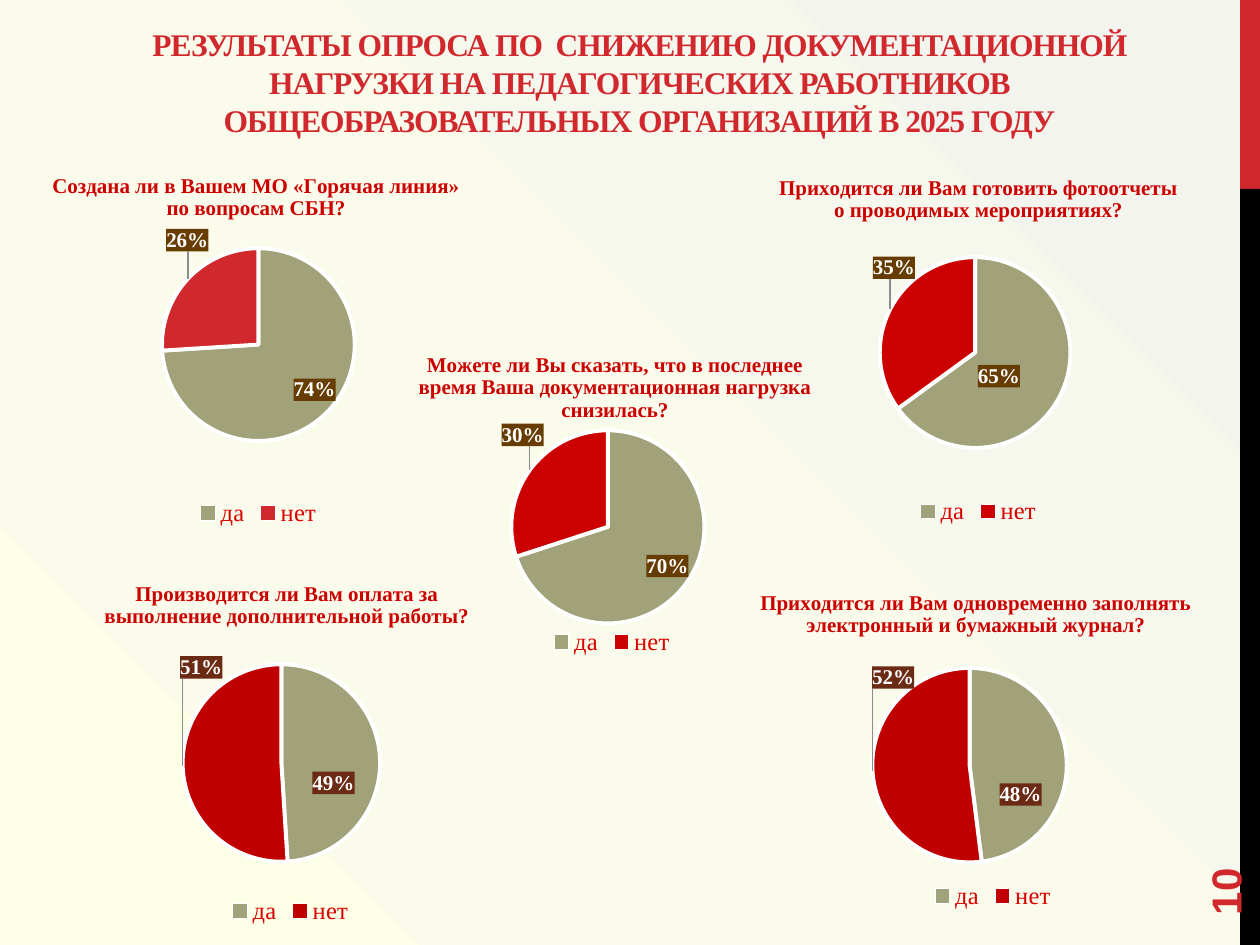
import math
from pptx import Presentation
from pptx import util as u
from pptx.chart.data import CategoryChartData
from pptx.dml.color import RGBColor
from pptx.enum import chart as ch, shapes, text
from pptx.oxml import parse_xml
from pptx.oxml.ns import qn

INK = dict(red="D1282E", black="000000", head="CC0000", key="DA0000", yes="A1A17A",
           deep="C00000", white="FFFFFF", brown="663C00", rust="6B2A14", gray="8C8C8C")
SERIF, SANS = "Times New Roman", "Arial"
NS = ('xmlns:c="http://schemas.openxmlformats.org/drawingml/2006/chart" '
      'xmlns:a="http://schemas.openxmlformats.org/drawingml/2006/main" '
      'xmlns:p="http://schemas.openxmlformats.org/presentationml/2006/main"')
TITLE = ("РЕЗУЛЬТАТЫ ОПРОСА ПО  СНИЖЕНИЮ ДОКУМЕНТАЦИОННОЙ НАГРУЗКИ НА ПЕДАГОГИЧЕСКИХ "
         "РАБОТНИКОВ ОБЩЕОБРАЗОВАТЕЛЬНЫХ ОРГАНИЗАЦИЙ В 2025 ГОДУ")
BARS = [(0, 3.81, "red"), (3.81, 15.24, "black")]
STOPS = [(0, "FDFFE7"), (38, "FAFBEA"), (99, "F4F4EF")]
TAG = 0.54, 0.31
PIES = [
    dict(box=(-1.14, 3.1, 12.7, 7.62), plot=(0.09, 0.25, 0.82, 0.51), head=(0.98, 3.4),
         ask=["Создана ли в Вашем МО «Горячая линия»", "по вопросам СБН?"],
         vals=(0.74, 0.26), no="red", tag="brown", tags=[(6.35, 7.84), (3.77, 4.86)]),
    dict(box=(13.56, 3.15, 12.32, 7.54), plot=(0.09, 0.27, 0.81, 0.51), head=(15.63, 3.44),
         ask=["Приходится ли Вам готовить фотоотчеты", "о проводимых мероприятиях?"],
         vals=(0.65, 0.35), no="head", tag="brown", tags=[(20.12, 7.6), (18.04, 5.38)]),
    dict(box=(13.97, 11.58, 11.99, 7.26), plot=(0.02, 0.26, 0.89, 0.54), head=(15.25, 11.8),
         ask=["Приходится ли Вам одновременно заполнять", "электронный и бумажный журнал?"],
         vals=(0.48, 0.52), no="deep", tag="rust", tags=[(20.54, 16.03), (18.04, 13.65)],
         key=(18.69, 17.68)),
    dict(box=(-0.23, 11.51, 12.17, 7.24), plot=(0.01, 0.26, 0.95, 0.55), head=(2.03, 11.62),
         ask=["Производится ли Вам оплата за", "выполнение дополнительной работы?"],
         vals=(0.49, 0.51), no="deep", tag="rust", tags=[(6.69, 15.79), (4.09, 13.45)]),
    dict(box=(7.24, 6.73, 10.34, 7.21), plot=(0.04, 0.27, 0.89, 0.54), head=(8.36, 7.01),
         ask=["Можете ли Вы сказать, что в последнее", "время Ваша документационная нагрузка",
              "снизилась?"],
         vals=(0.7, 0.3), no="head", tag="brown", tags=[(13.45, 11.41), (10.54, 8.77)],
         key=(11.01, 12.56)),
]


def rgb(name):
    return RGBColor.from_string(INK[name])


def style(font, size, color, face=SERIF, bold=True):
    font.size, font.bold, font.name = u.Pt(size), bold, face
    font.color.rgb = rgb(color)


def write(slide, box, words, size, face, anchor, align):
    item = slide.shapes.add_textbox(*map(u.Cm, box))
    frame = item.text_frame
    frame.text, frame.word_wrap, frame.vertical_anchor = words, True, anchor
    para = frame.paragraphs[0]
    para.alignment = align
    style(para.runs[0].font, size, "red", face)
    return item


def layout(*nums, edge=True):
    inner = '<c:layoutTarget val="inner"/>' if len(nums) == 4 else ""
    modes = '<c:xMode val="edge"/><c:yMode val="edge"/>' if edge else ""
    vals = "".join(f'<c:{k} val="{v:.4f}"/>' for k, v in zip("xywh", nums))
    return (f'<c:layout {NS}><c:manualLayout>{inner}{modes}{vals}'
            '</c:manualLayout></c:layout>')


def place(node, xml, after=None):
    for old in node.findall(qn("c:layout")):
        node.remove(old)
    spot = node.find(qn(after)) if after else None
    node.insert(0 if spot is None else node.index(spot) + 1, parse_xml(xml))


def pin(node, pie, spot, after):
    left, top, wide, high = pie["box"]
    place(node, layout((spot[0] - left) / wide, (spot[1] - top) / high), after)


def home(mid, rad, turn):
    side, rise = math.sin(turn), -math.cos(turn)
    lift = math.copysign(TAG[1], rise) if abs(rise) > 0.38 else 0
    return mid[0] + rad * side + math.copysign(TAG[0], side), mid[1] + rad * rise + lift


def labels(pie):
    left, top, wide, high = pie["box"]
    x, y, w, h = pie["plot"]
    mid = left + (x + w / 2) * wide, top + (y + h / 2) * high
    rad = min(w * wide, h * high) / 2
    look = (f'<c:numFmt formatCode="0%" sourceLinked="0"/><c:spPr><a:solidFill>'
            f'<a:srgbClr val="{INK[pie["tag"]]}"/></a:solidFill></c:spPr><c:txPr><a:bodyPr/>'
            f'<a:p><a:pPr><a:defRPr sz="1200" b="1"><a:solidFill><a:srgbClr val="{INK["white"]}"/>'
            f'</a:solidFill><a:latin typeface="{SERIF}"/></a:defRPr></a:pPr></a:p></c:txPr>'
            '<c:dLblPos val="bestFit"/>')
    look += "".join(f'<c:show{k} val="{int(k == "Val")}"/>' for k in
                    ("LegendKey", "Val", "CatName", "SerName", "Percent", "BubbleSize"))
    turns = math.pi * pie["vals"][0], math.pi * (1 + pie["vals"][0])
    rows = ""
    for i, (turn, spot) in enumerate(zip(turns, pie["tags"])):
        base = home(mid, rad, turn)
        move = layout((spot[0] - base[0]) / wide, (spot[1] - base[1]) / high, edge=False)
        rows += f'<c:dLbl><c:idx val="{i}"/>{move}{look}</c:dLbl>'
    lead = (f'<c:showLeaderLines val="1"/><c:leaderLines><c:spPr><a:ln w="9525"><a:solidFill>'
            f'<a:srgbClr val="{INK["gray"]}"/></a:solidFill></a:ln></c:spPr></c:leaderLines>')
    return f'<c:dLbls {NS}>{rows}{look}{lead}</c:dLbls>'


def draw(slide, pie):
    data = CategoryChartData(number_format="0%")
    data.categories = ["да", "нет"]
    data.add_series("Series 1", pie["vals"])
    chart = slide.shapes.add_chart(ch.XL_CHART_TYPE.PIE, *map(u.Cm, pie["box"]), data).chart
    style(chart.font, 10, "black", SANS, False)
    chart.has_title = chart.has_legend = True
    frame = chart.chart_title.text_frame
    frame.text = "\n".join(pie["ask"])
    for para in frame.paragraphs:
        para.alignment = text.PP_ALIGN.CENTER
        style(para.runs[0].font, 12, "head")
    pin(chart.chart_title._element, pie, pie["head"], "c:tx")
    chart.legend.position = ch.XL_LEGEND_POSITION.BOTTOM
    chart.legend.include_in_layout = False
    style(chart.legend.font, 14, "key", bold=False)
    if "key" in pie:
        pin(chart.legend._element, pie, pie["key"], "c:legendPos")
    plot = chart.plots[0]
    plot.vary_by_categories = True
    row = plot.series[0]
    for i, color in enumerate(("yes", pie["no"])):
        part = row.points[i].format
        part.fill.solid()
        part.fill.fore_color.rgb = rgb(color)
        part.line.color.rgb, part.line.width = rgb("white"), u.Pt(2.25)
    row._element.find(qn("c:cat")).addprevious(parse_xml(labels(pie)))
    place(plot._element.getparent(), layout(*pie["plot"]))


def main():
    deck = Presentation()
    deck.slide_width, deck.slide_height = u.Cm(25.4), u.Cm(19.05)
    slide = deck.slides.add_slide(deck.slide_layouts[6])
    stops = "".join(f'<a:gs pos="{p * 1000}"><a:srgbClr val="{c}"/></a:gs>' for p, c in STOPS)
    slide._element.cSld.insert(0, parse_xml(
        f'<p:bg {NS}><p:bgPr><a:gradFill><a:gsLst>{stops}</a:gsLst><a:path path="circle">'
        '<a:fillToRect t="100000" r="100000"/></a:path></a:gradFill><a:effectLst/></p:bgPr></p:bg>'))
    for top, high, color in BARS:
        bar = slide.shapes.add_shape(shapes.MSO_SHAPE.RECTANGLE,
                                     *map(u.Cm, (25, top, 0.4, high)))
        bar.shadow.inherit = False
        bar.fill.solid()
        bar.fill.fore_color.rgb = rgb(color)
        bar.line.fill.background()
    title = write(slide, (1.27, 0.43, 23.24, 2.49), TITLE, 18, SERIF,
                  text.MSO_ANCHOR.BOTTOM, text.PP_ALIGN.CENTER)
    title.text_frame.paragraphs[0].runs[0].font._element.set("spc", "-60")
    page = write(slide, (22.86, 16.36, 3.66, 1.02), "10", 24, SANS,
                 text.MSO_ANCHOR.MIDDLE, text.PP_ALIGN.LEFT)
    page.rotation = 270
    for pie in PIES:
        draw(slide, pie)
    deck.save("out.pptx")


if __name__ == "__main__":
    main()
